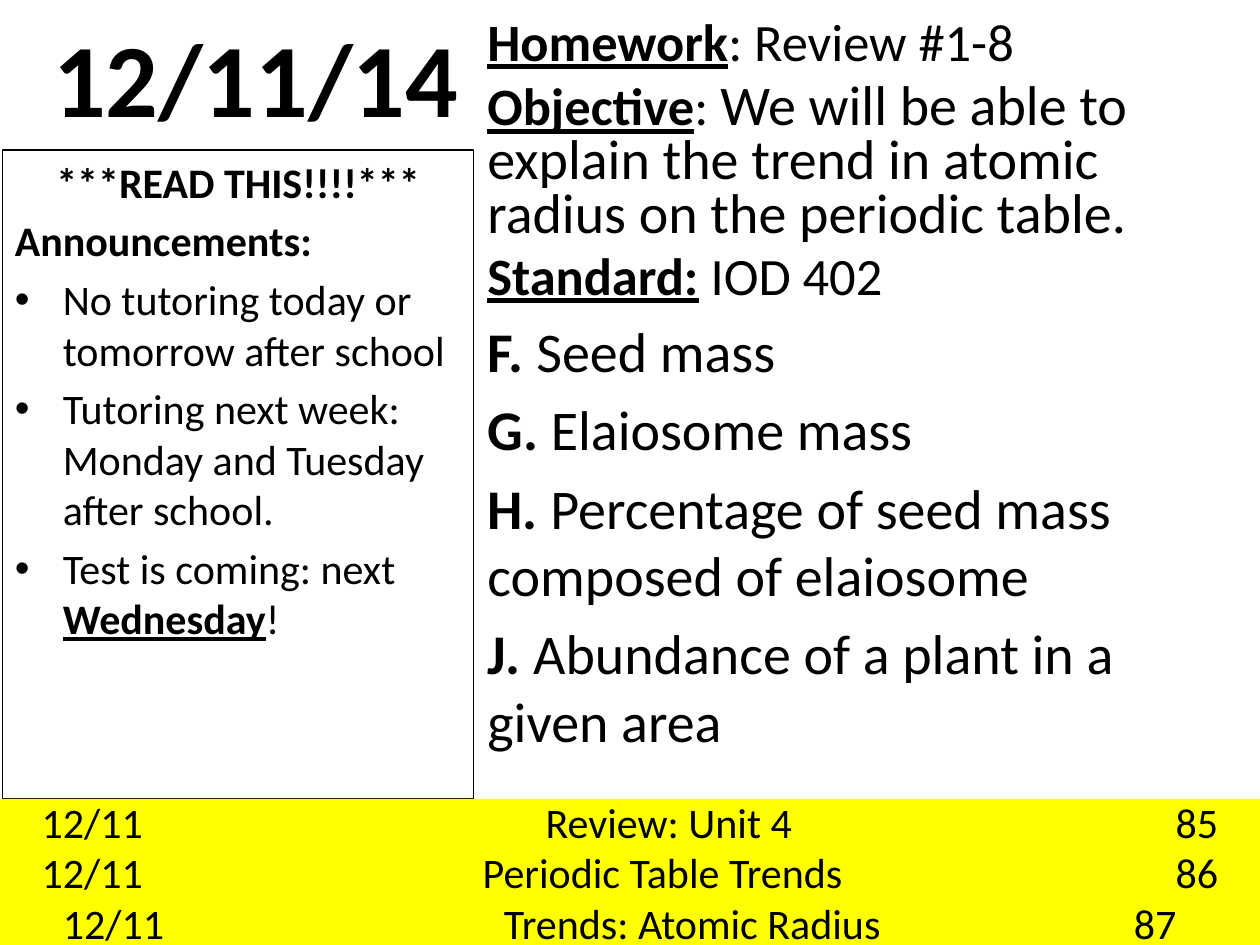
from lxml import etree
from pptx import Presentation
from pptx.dml.color import RGBColor
from pptx.enum.shapes import MSO_SHAPE
from pptx.enum.text import MSO_ANCHOR, MSO_AUTO_SIZE, PP_ALIGN
from pptx.oxml.ns import qn
from pptx.util import Inches, Pt

CENTER, LEFT = PP_ALIGN.CENTER, PP_ALIGN.LEFT
FONT = "Calibri"
BLACK, YELLOW = "000000", "FFFF00"
PLAIN, BOLD, KEY = "plain", "bold", "bold underlined"

DATE = "12/11/14"

# Paragraph: runs of (text, style, size), then paragraph options
ANNOUNCEMENTS = [
    ([("***READ THIS!!!!***", BOLD, 24)], {"align": CENTER}),
    ([("Announcements:", BOLD, 24)], {}),
    ([("No tutoring today or tomorrow after school", PLAIN, 24)], {"bullet": True}),
    ([("Tutoring next week: Monday and Tuesday after school.", PLAIN, 24)], {"bullet": True}),
    ([("Test is coming: next ", PLAIN, 24), ("Wednesday", KEY, 24), ("!", PLAIN, 24)],
     {"bullet": True}),
]

CHOICES = [
    ("F. ", "Seed mass"),
    ("G. ", "Elaiosome mass"),
    ("H. ", "Percentage of seed mass composed of elaiosome"),
    ("J. ", "Abundance of a plant in a given area"),
]

AGENDA = [
    ([("Homework", KEY, 30), (": Review #1-8", PLAIN, 30)], {}),
    ([("Objective", KEY, 30), (": ", PLAIN, 30),
      ("We will be able to explain the trend in atomic radius on the periodic table.", PLAIN, 32)],
     {"line_spacing": 0.8}),
    ([("Standard:", KEY, 30), (" IOD 402", PLAIN, 30)], {"line_spacing": 0.8}),
] + [([(letter, BOLD, 32), (choice, PLAIN, 32)], {}) for letter, choice in CHOICES]

# Notebook entry and its tab stops in inches
NOTEBOOK = [
    ("12/11\tReview: Unit 4\t85", (4, 9)),
    ("12/11\tPeriodic Table Trends\t86", (3.5, 9)),
    ("12/11\tTrends: Atomic Radius\t87\t", (3.5, 8.5, 9)),
]


def rgb(color):
    return RGBColor.from_string(color)


def format_run(run, size, style=PLAIN):
    font = run.font
    font.name, font.size = FONT, Pt(size)
    font.color.rgb = rgb(BLACK)
    font.bold = style != PLAIN
    font.underline = style == KEY


def add_bullet(paragraph, indent=0.38):
    properties = paragraph._p.get_or_add_pPr()
    properties.set("marL", str(Inches(indent)))
    properties.set("indent", str(-Inches(indent)))
    etree.SubElement(properties, qn("a:buFont"), typeface="Arial")
    etree.SubElement(properties, qn("a:buChar"), char="•")


def set_tab_stops(paragraph, stops):
    tabs = etree.SubElement(paragraph._p.get_or_add_pPr(), qn("a:tabLst"))
    for stop in stops:
        etree.SubElement(tabs, qn("a:tab"), pos=str(Inches(stop)), algn="l")


def next_paragraph(frame, index):
    return frame.paragraphs[0] if index == 0 else frame.add_paragraph()


def add_text_panel(slide, box, content):
    panel = slide.shapes.add_textbox(*map(Inches, box))
    frame = panel.text_frame
    frame.word_wrap = True
    for index, (runs, options) in enumerate(content):
        paragraph = next_paragraph(frame, index)
        paragraph.alignment = options.get("align", LEFT)
        paragraph.space_before = Pt(0.2 * max(size for _, _, size in runs))
        if "line_spacing" in options:
            paragraph.line_spacing = options["line_spacing"]
        if options.get("bullet"):
            add_bullet(paragraph)
        for text, style, size in runs:
            run = paragraph.add_run()
            run.text = text
            format_run(run, size, style)
    return panel


def add_title(slide):
    title = slide.shapes.title
    title.left, title.top, title.width, title.height = map(Inches, (-0.47, 0.02, 5, 1.17))
    frame = title.text_frame
    frame.text = DATE
    frame.auto_size = MSO_AUTO_SIZE.NONE
    frame.vertical_anchor = MSO_ANCHOR.MIDDLE
    frame.paragraphs[0].alignment = CENTER
    format_run(frame.paragraphs[0].runs[0], 59.4, BOLD)


def add_notebook_band(slide):
    band = slide.shapes.add_shape(MSO_SHAPE.RECTANGLE, *map(Inches, (0, 6.34, 10, 1.16)))
    band.shadow.inherit = False
    band.fill.solid()
    band.fill.fore_color.rgb = rgb(YELLOW)
    band.line.fill.background()
    frame = band.text_frame
    frame.vertical_anchor = MSO_ANCHOR.MIDDLE
    for index, (entry, stops) in enumerate(NOTEBOOK):
        paragraph = next_paragraph(frame, index)
        paragraph.text = entry
        paragraph.alignment = CENTER
        set_tab_stops(paragraph, stops)
        for run in paragraph.runs:
            format_run(run, 24)


def main():
    deck = Presentation()
    deck.slide_width, deck.slide_height = Inches(10), Inches(7.5)
    slide = deck.slides.add_slide(deck.slide_layouts.get_by_name("Title Only"))
    add_title(slide)
    announcements = add_text_panel(slide, (0.02, 1.19, 3.74, 5.15), ANNOUNCEMENTS)
    announcements.line.color.rgb = rgb(BLACK)
    announcements.line.width = Pt(0.75)
    add_text_panel(slide, (3.77, 0.02, 6.23, 6.32), AGENDA)
    add_notebook_band(slide)
    deck.save("out.pptx")


if __name__ == "__main__":
    main()
